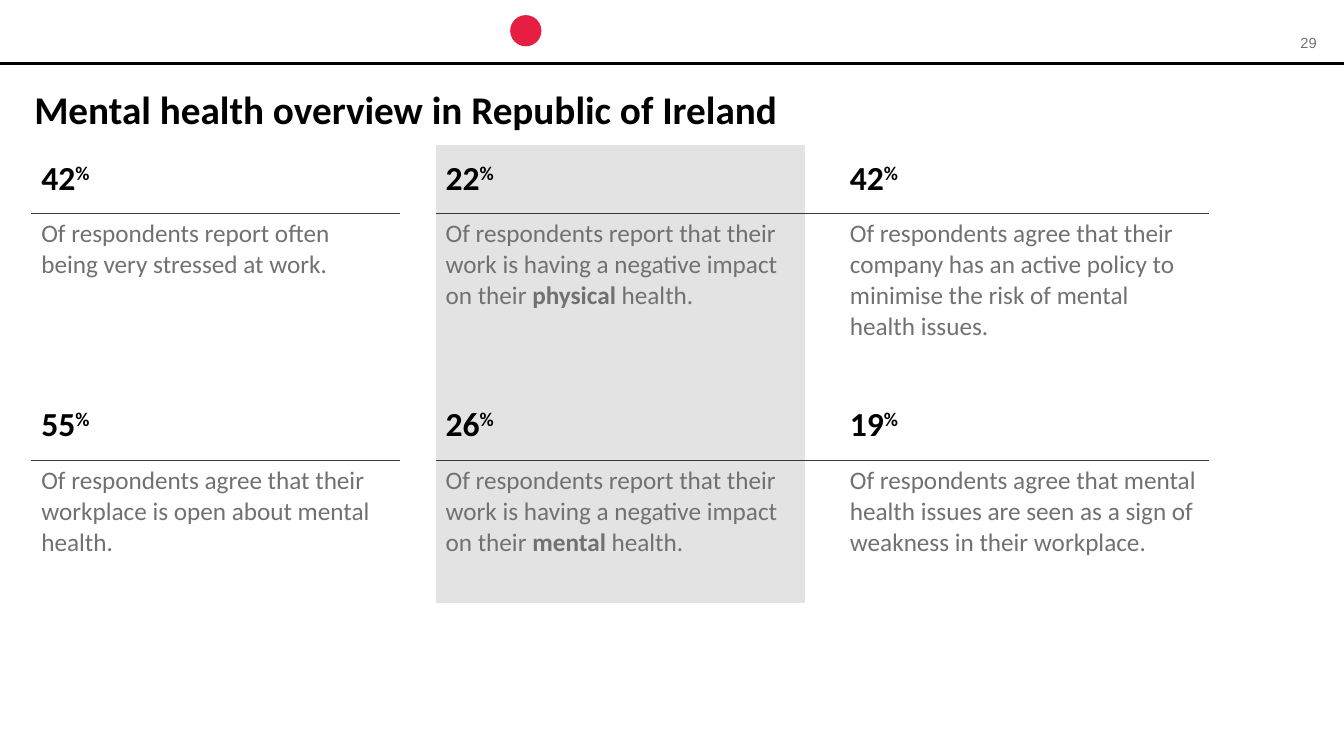
from dataclasses import dataclass

from lxml import etree
from pptx import Presentation
from pptx.dml.color import RGBColor
from pptx.enum.shapes import MSO_CONNECTOR, MSO_SHAPE
from pptx.enum.text import MSO_ANCHOR
from pptx.oxml.ns import qn
from pptx.util import Inches, Pt

STRAIGHT = MSO_CONNECTOR.STRAIGHT
OVAL = MSO_SHAPE.OVAL
MIDDLE = MSO_ANCHOR.MIDDLE
TOP = MSO_ANCHOR.TOP


@dataclass(frozen=True)
class Theme:
    black: str = "000000"
    red: str = "E51E42"
    grey_text: str = "717171"
    panel: str = "E3E3E3"
    rule: str = "383838"
    body_font: str = "Calibri"
    number_font: str = "Arial"
    title_size: float = 28
    figure_size: float = 24
    body_size: float = 18
    page_size: float = 10.5
    header_rule: float = 1.5
    table_rule: float = 1


THEME = Theme()
SLIDE_W, SLIDE_H = 13.33, 7.5

STATS = [
    [
        ("42", "Of respondents report often being very stressed at work."),
        ("22", "Of respondents report that their work is having a negative impact on their *physical* health."),
        ("42", "Of respondents agree that their company has an active policy to minimise the risk of mental health issues."),
    ],
    [
        ("55", "Of respondents agree that their workplace is open about mental health."),
        ("26", "Of respondents report that their work is having a negative impact on their *mental* health."),
        ("19", "Of respondents agree that mental health issues are seen as a sign of weakness in their workplace."),
    ],
]
STAT_W, GAP_W = 3.66, 0.35
ROW_HEIGHTS = [0.68, 1.74, 0.71, 1.41]
HIGHLIGHT_COL = 2
UNRULED_COL = 1


def add_run(p, text, size, color, bold=False, font=THEME.body_font):
    r = p.add_run()
    r.text = text
    r.font.name = font
    r.font.size = Pt(size)
    r.font.bold = bold
    r.font.color.rgb = RGBColor.from_string(color)
    return r


def add_text_box(slide, box, inset):
    tf = slide.shapes.add_textbox(*map(Inches, box)).text_frame
    tf.word_wrap = True
    tf.margin_left = tf.margin_right = Inches(inset)
    tf.margin_top = tf.margin_bottom = Inches(inset / 2)
    return tf.paragraphs[0]


def add_header(slide, box, page):
    x, y, w, h = box
    line = slide.shapes.add_connector(
        STRAIGHT, Inches(x), Inches(y + h), Inches(x + w), Inches(y + h))
    line.line.color.rgb = RGBColor.from_string(THEME.black)
    line.line.width = Pt(THEME.header_rule)
    etree.SubElement(line._element.spPr, qn("a:effectLst"))

    dot = slide.shapes.add_shape(
        OVAL, Inches(x + 5.06), Inches(y + 0.15), Inches(0.31), Inches(0.31))
    dot.shadow.inherit = False
    dot.fill.solid()
    dot.fill.fore_color.rgb = RGBColor.from_string(THEME.red)
    dot.line.fill.background()

    p = add_text_box(slide, (x + w - 0.53, y + 0.29, 0.53, 0.22), 0.1)
    add_run(p, page, THEME.page_size, THEME.grey_text, font=THEME.number_font)


def add_title(slide, box, text):
    p = add_text_box(slide, box, 0)
    add_run(p, text, THEME.title_size, THEME.black, bold=True)


def set_borders(cell, ruled_side):
    tcPr = cell._tc.get_or_add_tcPr()
    for side in ("lnL", "lnR", "lnT", "lnB"):
        ln = etree.SubElement(tcPr, qn(f"a:{side}"))
        if side == ruled_side:
            ln.set("w", str(Pt(THEME.table_rule)))
            fill = etree.SubElement(ln, qn("a:solidFill"))
            etree.SubElement(fill, qn("a:srgbClr")).set("val", THEME.rule)
        else:
            etree.SubElement(ln, qn("a:noFill"))


def style_cell(cell, row, col):
    ruled_side = "lnT" if row % 2 else "lnB"
    set_borders(cell, None if col == UNRULED_COL else ruled_side)
    if col == HIGHLIGHT_COL:
        cell.fill.solid()
        cell.fill.fore_color.rgb = RGBColor.from_string(THEME.panel)
    else:
        cell.fill.background()
    cell.vertical_anchor = TOP if row % 2 else MIDDLE


def write_figure(cell, value):
    p = cell.text_frame.paragraphs[0]
    add_run(p, value, THEME.figure_size, THEME.black, bold=True)
    percent = add_run(p, "%", THEME.figure_size, THEME.black, bold=True)
    percent._r.get_or_add_rPr().set("baseline", "30000")


def write_description(cell, text):
    p = cell.text_frame.paragraphs[0]
    for i, part in enumerate(text.split("*")):
        add_run(p, part, THEME.body_size, THEME.grey_text, bold=i % 2 == 1)


def add_stats_table(slide, box, stats):
    col_count = 2 * len(stats[0]) - 1
    table = slide.shapes.add_table(
        len(ROW_HEIGHTS), col_count, *map(Inches, box)).table
    table.first_row = False
    table.horz_banding = False
    for col in range(col_count):
        table.columns[col].width = Inches(GAP_W if col % 2 else STAT_W)
    for row, height in enumerate(ROW_HEIGHTS):
        table.rows[row].height = Inches(height)
        for col in range(col_count):
            style_cell(table.cell(row, col), row, col)
    for i, band in enumerate(stats):
        for j, (value, text) in enumerate(band):
            write_figure(table.cell(2 * i, 2 * j), value)
            write_description(table.cell(2 * i + 1, 2 * j), text)


def main():
    prs = Presentation()
    prs.slide_width = Inches(SLIDE_W)
    prs.slide_height = Inches(SLIDE_H)
    slide = prs.slides.add_slide(prs.slide_layouts[6])
    add_header(slide, (0, 0, SLIDE_W, 0.63), "29")
    add_title(slide, (0.34, 0.85, 12.67, 0.55),
              "Mental health overview in Republic of Ireland")
    add_stats_table(slide, (0.31, 1.44, 11.68, 4.54), STATS)
    prs.save("out.pptx")


if __name__ == "__main__":
    main()
